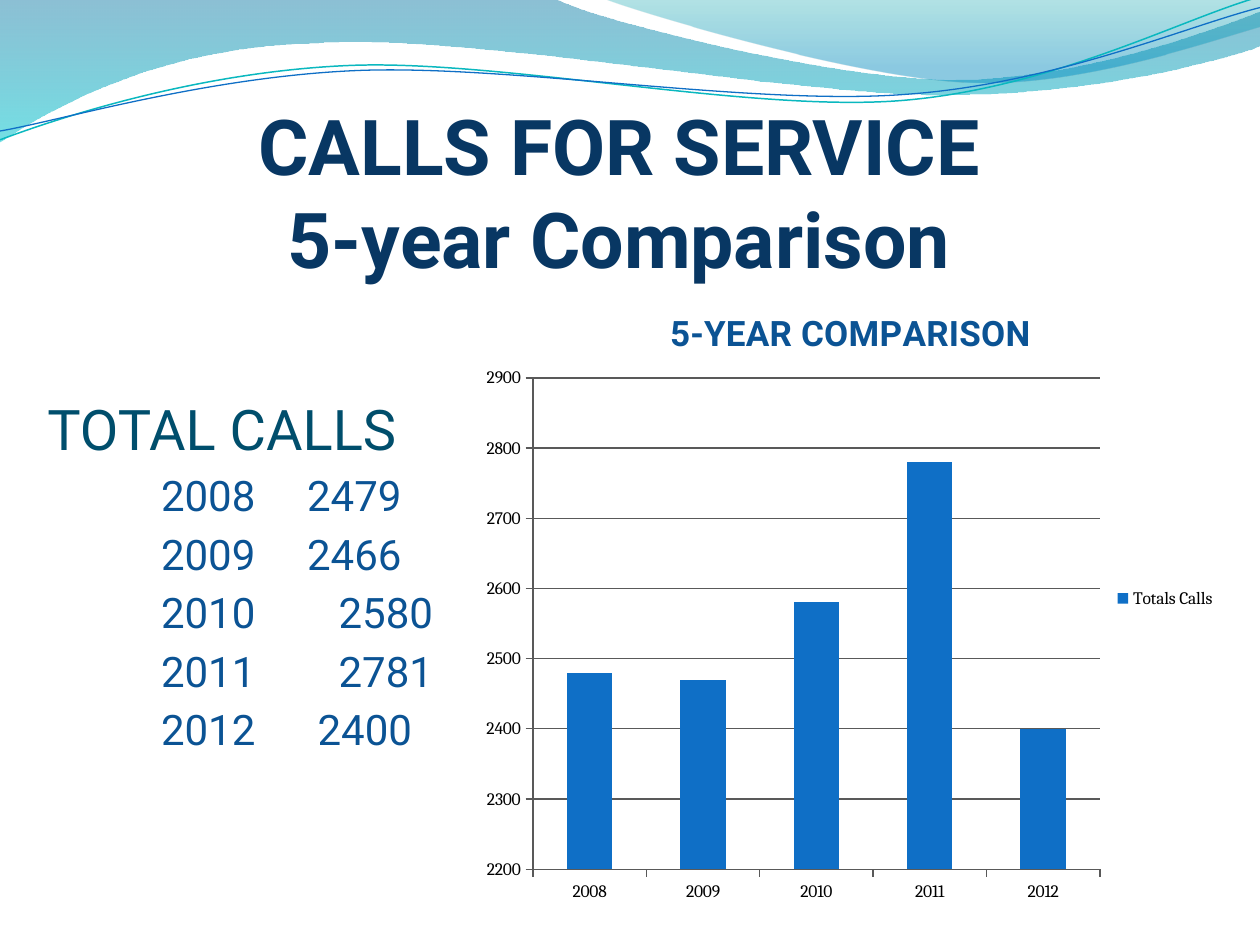
from math import cos, radians, sin

from lxml.etree import SubElement
from pptx import Presentation
from pptx.chart.data import CategoryChartData
from pptx.dml.color import RGBColor
from pptx.enum.chart import XL_CHART_TYPE, XL_LEGEND_POSITION, XL_TICK_MARK
from pptx.enum.text import MSO_ANCHOR, PP_ALIGN
from pptx.oxml.ns import qn
from pptx.util import Pt

NAVY = RGBColor(0x08, 0x37, 0x63)
BLUE = RGBColor(0x0B, 0x53, 0x94)
TEAL = RGBColor(0x00, 0x4E, 0x6C)
BAR_BLUE = RGBColor(0x0F, 0x6F, 0xC6)
LINE_TEAL = RGBColor(0x0A, 0xB8, 0xBF)
GREY = RGBColor(0x59, 0x59, 0x59)
BLACK = RGBColor(0, 0, 0)
BAND_TOP = RGBColor(0x00, 0x74, 0xA1)
BAND_BOTTOM = RGBColor(0x00, 0xC6, 0xCF)
CORNER_TOP = RGBColor(0x00, 0xA1, 0xA9)
CORNER_BOTTOM = RGBColor(0x00, 0x8B, 0xBF)
TILT = 2.7
TILT_CENTER = (4.99, 0.57)

presentation = Presentation()
presentation.slide_width, presentation.slide_height = Pt(720), Pt(540)
slide = presentation.slides.add_slide(presentation.slide_layouts[6])


def add_wave(start, segments, closed, tilt=0):
    """Draw an outline; a segment is a line end (2 numbers) or a Bezier (6), in units of 72 points.

    The points are turned back by the tilt, which the shape then applies as its rotation.
    """
    cosine, sine = cos(radians(tilt)), sin(radians(tilt))
    center_x, center_y = TILT_CENTER
    routes = []
    for numbers in [start, *segments]:
        offsets = [(x - center_x, y - center_y) for x, y in zip(numbers[::2], numbers[1::2])]
        routes.append([(Pt(72 * (center_x + x * cosine - y * sine)),
                        Pt(72 * (center_y + x * sine + y * cosine))) for x, y in offsets])
    builder = slide.shapes.build_freeform(*routes[0][0])
    builder.add_line_segments([route[-1] for route in routes[1:]], close=closed)
    shape = builder.convert_to_shape()
    line_elements = list(shape.element.iter(qn("a:lnTo")))
    for line_element, route in zip(line_elements, routes[1:]):
        if len(route) == 3:
            line_element.clear()
            line_element.tag = qn("a:cubicBezTo")
            for x, y in route:
                SubElement(line_element, qn("a:pt"), x=str(x - shape.left), y=str(y - shape.top))
    shape.rotation = -tilt
    shape.shadow.inherit = False
    return shape


def set_font(font, **values):
    color = values.pop("color")
    for name, value in values.items():
        setattr(font, name, value)
    font.color.rgb = color


# Header waves: (start, segments, gradient stops as position, colour, opacity %)
bands = [
    ((0, 0),
     [(4.4, -0.01), (4.76, 0.17, 6.64, 0.63, 7.58, 0.63), (8.53, 0.63, 9.58, 0.26, 10, 0.09),
      (10.01, 0.36), (9.83, 0.44, 8.7, 0.76, 7.46, 0.75), (6.22, 0.75, 3.82, 0.28, 2.57, 0.34),
      (1.29, 0.36, 0.46, 0.83, -0.01, 1.13)],
     [(0, BAND_TOP, 45), (1, BAND_BOTTOM, 55)]),
    ((4.79, -0.01),
     [(5.09, 0.11, 6.82, 0.62, 7.69, 0.65), (8.56, 0.69, 9.61, 0.32, 10, 0.21), (10, 0)],
     [(0, CORNER_TOP, 30), (0.8, CORNER_BOTTOM, 45)]),
]
for start, segments, stops in bands:
    band = add_wave(start, segments, True)
    band.line.fill.background()
    band.fill.gradient()
    band.fill.gradient_angle = 270
    for stop, (position, color, opacity) in zip(band.fill.gradient_stops, stops):
        stop.position = position
        stop.color.rgb = color
    color_elements = list(band.element.spPr.iter(qn("a:srgbClr")))
    for color_element, (position, color, opacity) in zip(color_elements, stops):
        SubElement(color_element, qn("a:alpha"), val=str(opacity * 1000))

wave_lines = [
    ((0, 1.11), [(0.48, 0.93, 1.58, 0.57, 2.77, 0.52), (3.95, 0.47, 5.93, 0.89, 7.13, 0.8),
                 (8.33, 0.71, 9.38, 0.15, 9.98, -0.02)], LINE_TEAL, 0.85),
    ((0, 1.04), [(0.47, 0.96, 1.64, 0.61, 2.83, 0.56), (4.03, 0.51, 5.97, 0.84, 7.17, 0.75),
                 (8.36, 0.67, 9.41, 0.21, 10, 0.06)], BAR_BLUE, 0.75),
]
for start, segments, color, width in wave_lines:
    wave = add_wave(start, segments, False, TILT)
    wave.fill.background()
    wave.line.color.rgb = color
    wave.line.width = Pt(width)

# Title
title = slide.shapes.add_textbox(Pt(30), Pt(102), Pt(648), Pt(60))
frame = title.text_frame
frame.word_wrap = True
frame.vertical_anchor = MSO_ANCHOR.BOTTOM
frame.margin_left = frame.margin_right = frame.margin_bottom = 0
paragraph = frame.paragraphs[0]
paragraph.alignment = PP_ALIGN.CENTER
paragraph.add_run().text = "CALLS FOR SERVICE"
paragraph.add_line_break()
paragraph.add_run().text = "5-year Comparison"
for run in paragraph.runs:
    set_font(run.font, name="Roboto", size=Pt(44), bold=True, color=NAVY)

# Yearly totals: (year, calls, tab position of the calls)
totals = [("2008", 2479, 148.5), ("2009", 2466, 148.5), ("2010", 2580, 166.5),
          ("2011", 2781, 166.5), ("2012", 2400, 154.5)]
body = slide.shapes.add_textbox(Pt(-18), Pt(222), Pt(306), Pt(263))
frame = body.text_frame
frame.word_wrap = True
frame.margin_left = Pt(45)
paragraph = frame.paragraphs[0]
run = paragraph.add_run()
run.text = "TOTAL CALLS"
set_font(run.font, name="Roboto", size=Pt(32), color=TEAL)
for year, calls, calls_tab in totals:
    paragraph = frame.add_paragraph()
    paragraph.space_before = Pt(4.6)
    tab_list = SubElement(paragraph._p.get_or_add_pPr(), qn("a:tabLst"))
    for tab in (65, calls_tab):
        SubElement(tab_list, qn("a:tab"), pos=str(Pt(tab)), algn="l")
    run = paragraph.add_run()
    run.text = f"\t{year}\t{calls}"
    set_font(run.font, name="Roboto", size=Pt(24), color=BLUE)

# Chart, with the calls rounded to tens
chart_data = CategoryChartData()
chart_data.categories = [year for year, calls, calls_tab in totals]
chart_data.add_series("Totals Calls", [round(calls, -1) for year, calls, calls_tab in totals])
chart = slide.shapes.add_chart(XL_CHART_TYPE.COLUMN_CLUSTERED, Pt(270), Pt(162),
                               Pt(432), Pt(360), chart_data).chart
set_font(chart.font, name="Cambria", size=Pt(10), color=BLACK)
chart.has_title = True
chart.chart_title.include_in_layout = False
run = chart.chart_title.text_frame.paragraphs[0].add_run()
run.text = "5-YEAR COMPARISON"
set_font(run.font, name="Roboto", size=Pt(20), bold=True, color=BLUE)
chart.has_legend = True
chart.legend.position = XL_LEGEND_POSITION.RIGHT
chart.legend.include_in_layout = False

plot = chart.plots[0]
plot.gap_width = 150
plot.vary_by_categories = False
fill = plot.series[0].format.fill
fill.solid()
fill.fore_color.rgb = BAR_BLUE

value_axis = chart.value_axis
value_axis.minimum_scale, value_axis.maximum_scale, value_axis.major_unit = 2200, 2900, 100
value_axis.has_major_gridlines = True
for axis in (chart.category_axis, value_axis):
    axis.major_tick_mark = XL_TICK_MARK.OUTSIDE
for part in (chart.category_axis, value_axis, value_axis.major_gridlines):
    part.format.line.color.rgb = GREY
    part.format.line.width = Pt(0.75)

# Plot area as fractions of the chart
plot_area = chart.element.find(".//" + qn("c:plotArea"))
for old_layout in plot_area.findall(qn("c:layout")):
    plot_area.remove(old_layout)
layout = SubElement(plot_area, qn("c:layout"))
plot_area.insert(0, layout)
manual_layout = SubElement(layout, qn("c:manualLayout"))
for tag, value in {"layoutTarget": "inner", "xMode": "edge", "yMode": "edge",
                   "x": 0.08, "y": 0.15, "w": 0.75, "h": 0.78}.items():
    SubElement(manual_layout, qn(f"c:{tag}"), val=str(value))

presentation.save("out.pptx")
